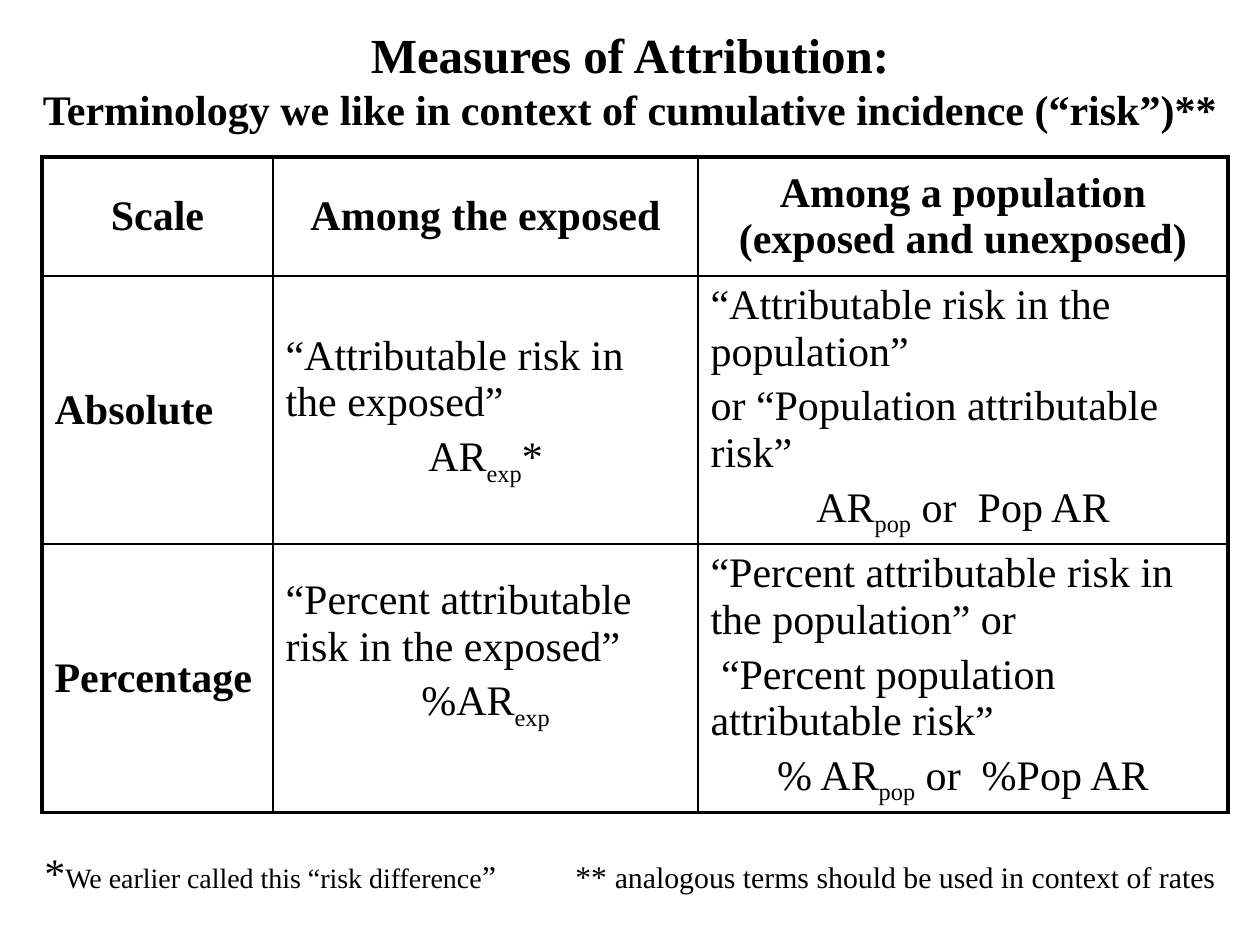
from lxml import etree
from pptx import Presentation
from pptx.dml.color import RGBColor
from pptx.enum.text import MSO_ANCHOR, MSO_AUTO_SIZE, PP_ALIGN
from pptx.oxml.ns import qn
from pptx.util import Pt

LEFT, CENTER = PP_ALIGN.LEFT, PP_ALIGN.CENTER
TOP, MIDDLE = MSO_ANCHOR.TOP, MSO_ANCHOR.MIDDLE
NO_AUTOFIT = MSO_AUTO_SIZE.NONE

EMU_PER_PX = 914400 // 126
TITLE_ONLY_LAYOUT = 5
FONT = "Times New Roman"
BODY_SIZE = 24
PARAGRAPH_GAP = 4.8
THIN, THICK = 1, 2.25
COLORS = {"text": "000000", "border": "000000", "background": "FFFFFF"}

COLUMN_WIDTHS = [231, 425, 530]
ROW_HEIGHTS = [119, 268, 268]

# Each cell lists its paragraphs; a tuple is a centred formula
# made of base, subscript and remainder.
HEADERS = ["Scale", "Among the exposed", "Among a population (exposed and unexposed)"]
ROWS = [
    ("Absolute",
     ["“Attributable risk in the exposed”", ("AR", "exp", "*")],
     ["“Attributable risk in the population”",
      "or “Population attributable risk”",
      ("AR", "pop", " or  Pop AR")]),
    ("Percentage",
     ["“Percent attributable risk in the exposed”", ("%AR", "exp", "")],
     ["“Percent attributable risk in the population” or",
      " “Percent population attributable risk”",
      ("% AR", "pop", " or  %Pop AR")]),
]


def px(length):
    return length * EMU_PER_PX


def place(shape, left, top, width, height):
    shape.left, shape.top = px(left), px(top)
    shape.width, shape.height = px(width), px(height)


def add_text(paragraph, text, size=BODY_SIZE, bold=False, subscript=False):
    run = paragraph.add_run()
    run.text = text
    run.font.name = FONT
    run.font.size = Pt(size)
    run.font.bold = bold
    run.font.color.rgb = RGBColor.from_string(COLORS["text"])
    if subscript:
        run.font._element.set("baseline", "-25000")


def add_title(slide):
    title = slide.shapes.title
    place(title, 0, 0, 1260, 158)
    frame = title.text_frame
    frame.auto_size = NO_AUTOFIT
    frame.word_wrap = True
    frame.vertical_anchor = MIDDLE
    paragraph = frame.paragraphs[0]
    paragraph.alignment = CENTER
    add_text(paragraph, "Measures of Attribution:", size=28, bold=True)
    paragraph.add_line_break()
    add_text(paragraph,
             "Terminology we like in context of cumulative incidence (“risk”)**",
             bold=True)


def set_borders(cell, widths):
    properties = cell._tc.get_or_add_tcPr()
    for side, width in zip("LRTB", widths):
        line = etree.SubElement(properties, qn(f"a:ln{side}"), w=str(Pt(width)))
        fill = etree.SubElement(line, qn("a:solidFill"))
        etree.SubElement(fill, qn("a:srgbClr"), val=COLORS["border"])


def fill_cell(cell, paragraphs, bold=False, alignment=LEFT, anchor=MIDDLE):
    cell.vertical_anchor = anchor
    frame = cell.text_frame
    for index, content in enumerate(paragraphs):
        paragraph = frame.add_paragraph() if index else frame.paragraphs[0]
        paragraph.space_before = Pt(PARAGRAPH_GAP if index else 0)
        if isinstance(content, tuple):
            paragraph.alignment = CENTER
            base, subscript, remainder = content
            add_text(paragraph, base)
            add_text(paragraph, subscript, subscript=True)
            if remainder:
                add_text(paragraph, remainder)
        else:
            paragraph.alignment = alignment
            add_text(paragraph, content, bold=bold)


def add_measures_table(slide):
    row_count, column_count = len(ROW_HEIGHTS), len(COLUMN_WIDTHS)
    shape = slide.shapes.add_table(
        row_count, column_count, px(42), px(157),
        px(sum(COLUMN_WIDTHS)), px(sum(ROW_HEIGHTS)))
    table = shape.table
    table.first_row = table.horz_banding = False
    for column, width in zip(table.columns, COLUMN_WIDTHS):
        column.width = px(width)
    for row, height in zip(table.rows, ROW_HEIGHTS):
        row.height = px(height)

    # Thick frame, thin inner lines
    for row in range(row_count):
        for column in range(column_count):
            cell = table.cell(row, column)
            outer = (column == 0, column == column_count - 1,
                     row == 0, row == row_count - 1)
            set_borders(cell, [THICK if edge else THIN for edge in outer])
            cell.fill.solid()
            cell.fill.fore_color.rgb = RGBColor.from_string(COLORS["background"])

    # Wording
    for column, header in enumerate(HEADERS):
        fill_cell(table.cell(0, column), [header], bold=True, alignment=CENTER)
    for row, (scale, exposed, population) in enumerate(ROWS, start=1):
        fill_cell(table.cell(row, 0), [scale], bold=True)
        fill_cell(table.cell(row, 1), exposed)
        fill_cell(table.cell(row, 2), population, anchor=TOP)

    # The percentage measure sits a little above the middle
    table.cell(2, 1).margin_bottom = px(54)


def add_footnotes(slide):
    box = slide.shapes.add_textbox(px(32), px(840), px(1207), px(63))
    frame = box.text_frame
    frame.word_wrap = True
    paragraph = frame.paragraphs[0]
    tab_stops = etree.SubElement(paragraph._p.get_or_add_pPr(), qn("a:tabLst"))
    etree.SubElement(tab_stops, qn("a:tab"), pos=str(px(531)), algn="l")
    add_text(paragraph, "*")
    add_text(paragraph, "We earlier called this “risk difference", size=16)
    add_text(paragraph, "”\t** ", size=18)
    add_text(paragraph, "analogous terms should be used in context of rates", size=17)


def main():
    presentation = Presentation()
    presentation.slide_width, presentation.slide_height = px(1260), px(945)
    layout = presentation.slide_layouts[TITLE_ONLY_LAYOUT]
    slide = presentation.slides.add_slide(layout)
    add_title(slide)
    add_measures_table(slide)
    add_footnotes(slide)
    presentation.save("out.pptx")


if __name__ == "__main__":
    main()
